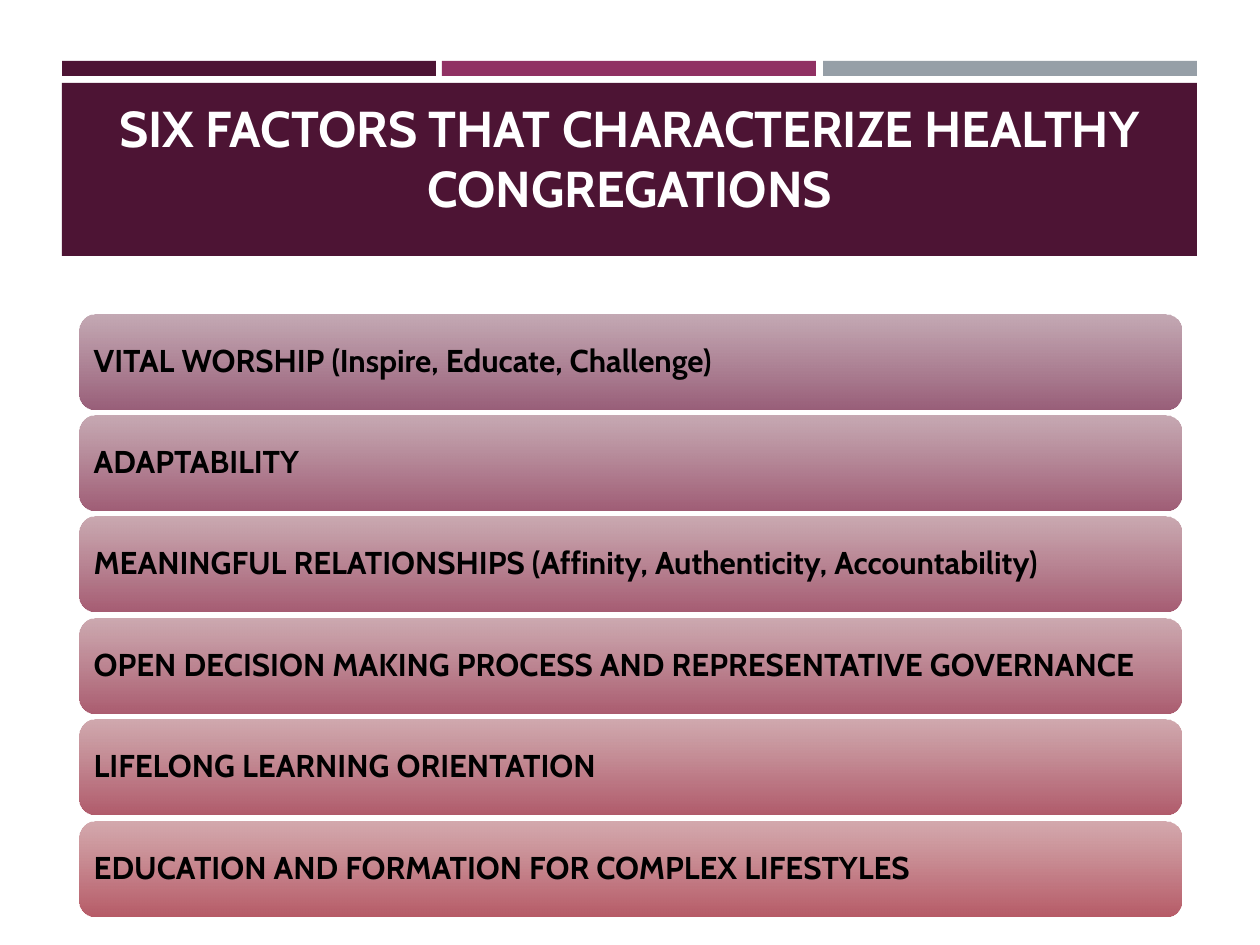
from lxml import etree
from pptx import Presentation
from pptx import util as u
from pptx.dml.color import RGBColor
from pptx.enum import shapes, text
from pptx.oxml.ns import qn

PX_PER_INCH = 126
FONT = "Cabin"
COLORS = {"plum": "4D1434", "magenta": "903163", "gray": "969FA7",
          "white": "FFFFFF", "black": "000000"}

FACTORS = [
    ("VITAL WORSHIP (Inspire, Educate, Challenge)", "BD9FAB", "995F79"),
    ("ADAPTABILITY", "C09FAA", "A05E76"),
    ("MEANINGFUL RELATIONSHIPS (Affinity, Authenticity, Accountability)",
     "C49FA8", "A65D73"),
    ("OPEN DECISION MAKING PROCESS AND REPRESENTATIVE GOVERNANCE",
     "C79FA7", "AB5D70"),
    ("LIFELONG LEARNING ORIENTATION", "CB9FA5", "B15C6C"),
    ("EDUCATION AND FORMATION FOR COMPLEX LIFESTYLES", "CF9FA4", "B75C68"),
]


def px(length):
    return u.Emu(round(length * 914400 / PX_PER_INCH))


def set_all(target, values):
    for name, value in values.items():
        setattr(target, name, value)


def add_block(page, kind, *place):
    block = page.shapes.add_shape(kind, *map(px, place))
    block.shadow.inherit = False
    block.line.fill.background()
    return block


def add_band(page, color, *place):
    band = add_block(page, shapes.MSO_SHAPE.RECTANGLE, *place)
    band.fill.solid()
    band.fill.fore_color.rgb = RGBColor.from_string(COLORS[color])


def write(box, words, color, size, frame_format, para_format):
    frame = box.text_frame
    set_all(frame, {"word_wrap": True, **frame_format})
    para = frame.paragraphs[0]
    set_all(para, para_format)
    span = para.add_run()
    span.text = words
    set_all(span.font, {"name": FONT, "size": u.Pt(size), "bold": True})
    span.font.color.rgb = RGBColor.from_string(COLORS[color])


def add_title(page, words):
    box = page.shapes.add_textbox(*map(px, (79, 97, 1101, 125)))
    write(box, words, "white", 28.8,
          {"margin_top": 0, "margin_bottom": 0,
           "vertical_anchor": text.MSO_ANCHOR.TOP},
          {"alignment": text.PP_ALIGN.CENTER})


def fill_gradient(block, top, bottom):
    block.fill.gradient()
    block.fill.gradient_angle = 270
    stops = block.fill.gradient_stops
    for stop, position, color in zip(stops, (0, 1), (top, bottom)):
        stop.position = position
        stop.color.rgb = RGBColor.from_string(color)
    top_color = block.element.spPr.find(".//" + qn("a:srgbClr"))
    etree.SubElement(top_color, qn("a:alpha"), val="90000")


def add_factor(page, y, words, top, bottom):
    bar = add_block(page, shapes.MSO_SHAPE.ROUNDED_RECTANGLE, 79, y, 1102, 95)
    fill_gradient(bar, top, bottom)
    write(bar, words, "black", 18,
          {"margin_left": px(10), "margin_right": px(10),
           "vertical_anchor": text.MSO_ANCHOR.MIDDLE},
          {"alignment": text.PP_ALIGN.LEFT, "line_spacing": 0.9})


def main():
    deck = Presentation()
    set_all(deck, {"slide_width": px(1260), "slide_height": px(945)})
    page = deck.slides.add_slide(deck.slide_layouts[6])
    for i, color in enumerate(("plum", "magenta", "gray")):
        add_band(page, color, 62 + i * 761 // 2, 61, 374, 15)
    add_band(page, "plum", 62, 83, 1135, 173)
    add_title(page, "SIX FACTORS THAT CHARACTERIZE HEALTHY CONGREGATIONS")
    for i, factor in enumerate(FACTORS):
        add_factor(page, 315 + i * 507 // 5, *factor)
    deck.save("out.pptx")


if __name__ == "__main__":
    main()
